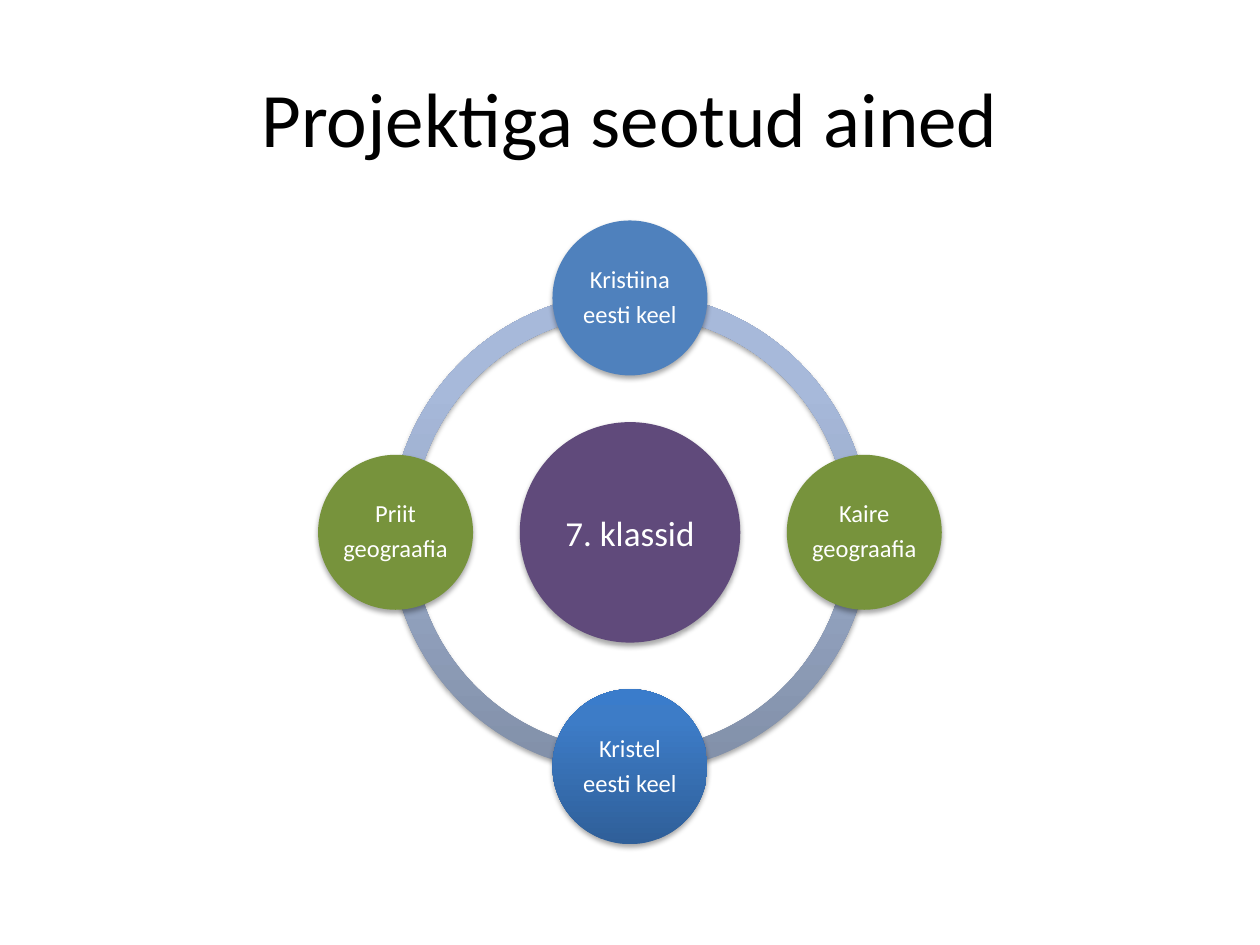
from lxml import etree
from pptx import Presentation, util as u
from pptx.dml.color import RGBColor
from pptx.enum import shapes, text
from pptx.oxml import ns

MID = (5, 4.225)
REACH = 1.86
RING = [(0, "818FA8"), (80, "A7B9DA"), (100, "A7BADC")]
BLUE = [(0, "2F5F99"), (80, "3D7CC7"), (100, "3A7CCB")]
NODES = [
    (0, -1, "4F81BD", ["Kristiina", "eesti keel"]),
    (1, 0, "77933C", ["Kaire", "geograafia"]),
    (0, 1, BLUE, ["Kristel", "eesti keel"]),
    (-1, 0, "77933C", ["Priit", "geograafia"]),
]


def rgb(code):
    return RGBColor.from_string(code)


def sub(node, tag, **attrs):
    """Add a child such as a:gs with the given attributes."""
    return etree.SubElement(node, ns.qn(tag), {k: str(v) for k, v in attrs.items()})


class Deck:
    def __init__(self, slide, font="Calibri"):
        self.slide = slide
        self.font = font

    def paint(self, shape, fill):
        """Fill with one colour, or with stops that run from bottom to top."""
        if isinstance(fill, str):
            shape.fill.solid()
            shape.fill.fore_color.rgb = rgb(fill)
        else:
            shape.fill.gradient()
            shape.fill.gradient_angle = 90
            stops = shape._element.spPr.find(".//" + ns.qn("a:gsLst"))
            for old in list(stops):
                stops.remove(old)
            for pos, code in fill:
                stop = sub(stops, "a:gs", pos=pos * 1000)
                sub(stop, "a:srgbClr", val=code)
        shape.line.fill.background()

    def shade(self, shape):
        """Give a soft shadow that falls straight down."""
        shape.shadow.inherit = False
        effects = shape._element.spPr.find(ns.qn("a:effectLst"))
        outer = sub(effects, "a:outerShdw", blurRad=u.Pt(3.1), dist=u.Pt(1.8),
                    dir=5400000, rotWithShape=0)
        sub(sub(outer, "a:srgbClr", val="000000"), "a:alpha", val=35000)

    def label(self, frame, lines, size, color, inset, wrap):
        frame.word_wrap = wrap
        frame.vertical_anchor = text.MSO_ANCHOR.MIDDLE
        frame.margin_left = frame.margin_right = u.Inches(inset)
        frame.margin_top = frame.margin_bottom = u.Inches(inset)
        for i, line in enumerate(lines):
            para = frame.add_paragraph() if i else frame.paragraphs[0]
            para.alignment = text.PP_ALIGN.CENTER
            if len(lines) > 1:
                para.line_spacing = 0.9
                para.space_after = u.Pt(0.35 * size)
            run = para.add_run()
            run.text = line
            run.font.name = self.font
            run.font.size = u.Pt(size)
            run.font.color.rgb = rgb(color)

    def title(self, line):
        box = self.slide.shapes.add_textbox(
            u.Inches(0.5), u.Inches(0.3), u.Inches(9), u.Inches(1.25))
        self.label(box.text_frame, [line], 44, "000000", 0.05, True)

    def round(self, kind, x, y, size, fill):
        """Add a shape of equal sides around the centre x, y."""
        shape = self.slide.shapes.add_shape(
            kind, u.Inches(x - size / 2), u.Inches(y - size / 2),
            u.Inches(size), u.Inches(size))
        self.paint(shape, fill)
        self.shade(shape)
        return shape

    def arc(self, start, end):
        shape = self.round(shapes.MSO_SHAPE.BLOCK_ARC, *MID, 3.81, RING)
        for i, value in enumerate((start, end, 0.046)):
            shape.adjustments[i] = value

    def disc(self, x, y, size, fill, lines, points):
        shape = self.round(shapes.MSO_SHAPE.OVAL, x, y, size, fill)
        self.label(shape.text_frame, lines, points, "FFFFFF", 0.02, False)


def main():
    prs = Presentation()
    prs.slide_width, prs.slide_height = u.Inches(10), u.Inches(7.5)
    deck = Deck(prs.slides.add_slide(prs.slide_layouts[6]))
    deck.title("Projektiga seotud ained")
    quarter = 54  # 90 degrees in adjustment units
    for turn in (2, 1, 0, 3):
        deck.arc(turn * quarter, (turn + 1) % 4 * quarter)
    deck.disc(*MID, 1.75, "604A7B", ["7. klassid"], 20)
    for dx, dy, fill, lines in NODES:
        deck.disc(MID[0] + dx * REACH, MID[1] + dy * REACH, 1.23, fill, lines, 14)
    prs.save("out.pptx")


if __name__ == "__main__":
    main()
